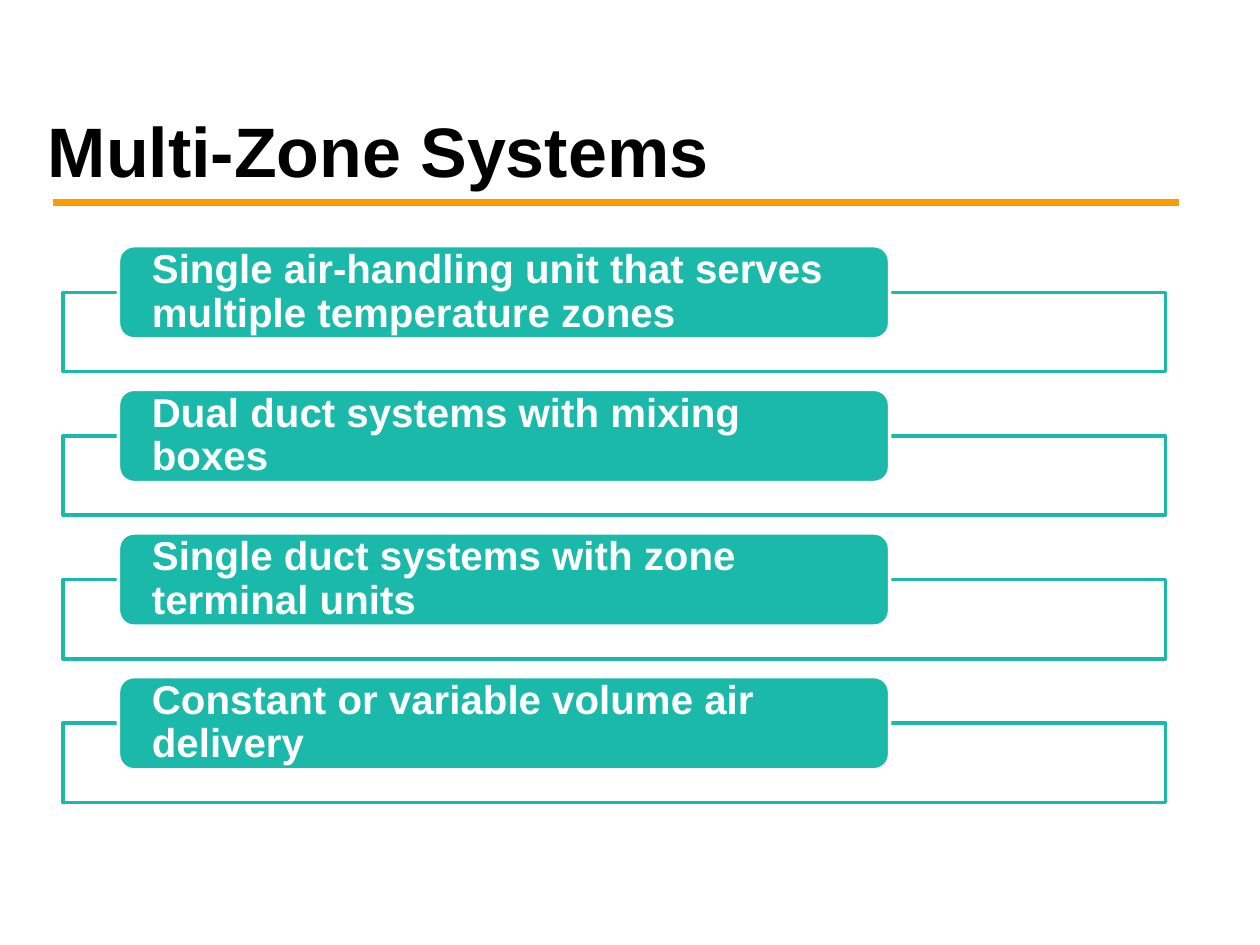
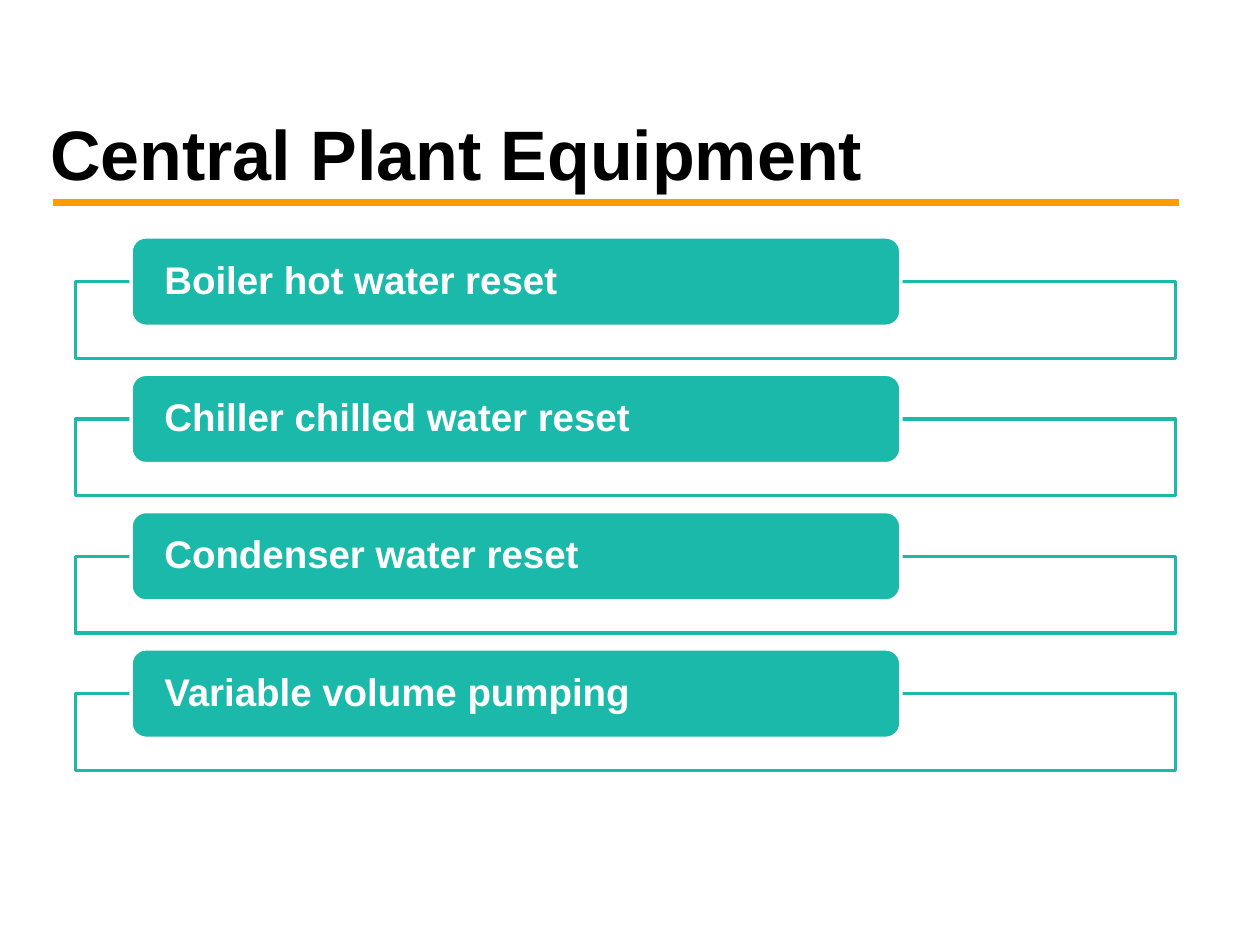
from lxml import etree
from pptx import Presentation
from pptx.dml.color import RGBColor
from pptx.enum.shapes import MSO_CONNECTOR, MSO_SHAPE
from pptx.enum.text import MSO_ANCHOR, MSO_AUTO_SIZE, PP_ALIGN
from pptx.oxml.ns import qn
from pptx.util import Inches, Pt

STRAIGHT = MSO_CONNECTOR.STRAIGHT
RECTANGLE, ROUNDED = MSO_SHAPE.RECTANGLE, MSO_SHAPE.ROUNDED_RECTANGLE
TOP, MIDDLE = MSO_ANCHOR.TOP, MSO_ANCHOR.MIDDLE
LEFT = PP_ALIGN.LEFT
NO_AUTOFIT = MSO_AUTO_SIZE.NONE

COLORS = {"title": "000000", "rule": "FE9B03", "teal": "1BB9A9", "white": "FFFFFF"}
FONT = "Arial"
LABEL_INDENT = 0.44  # from the left edge of a frame to its label

# Boxes are (left, top, width, height); sizes of frames and labels are (width, height).
SLIDES = [
    {
        "title": "Multi-Zone Systems",
        "title_box": (0.28, 0.88, 9, 0.71),
        "title_spacing": 0.9,
        "items": [
            "Single air-handling unit that serves multiple temperature zones",
            "Dual duct systems with mixing boxes",
            "Single duct systems with zone terminal units",
            "Constant or variable volume air delivery",
        ],
        "start": (0.5, 1.95),
        "step": 1.14,
        "frame": (8.75, 0.63),
        "label": (6.12, 0.74),
        "size": 23,
    },
    {
        "title": "Central Plant Equipment",
        "title_box": (0.3, 0.83, 9, 0.77),
        "title_spacing": 1.0,
        "items": [
            "Boiler hot water reset",
            "Chiller chilled water reset",
            "Condenser water reset",
            "Variable volume pumping",
        ],
        "start": (0.6, 1.88),
        "step": 1.09,
        "frame": (8.73, 0.61),
        "label": (6.11, 0.71),
        "size": 22,
    },
]


def color(name):
    return RGBColor.from_string(COLORS[name])


def write_text(shape, text, size, color_name, spacing, anchor, margins):
    """Fill a shape with one bold, left-aligned paragraph."""
    frame = shape.text_frame
    frame.text = text
    frame.word_wrap = True
    frame.auto_size = NO_AUTOFIT
    frame.vertical_anchor = anchor
    side, end = (Inches(margin) for margin in margins)
    frame.margin_left = frame.margin_right = side
    frame.margin_top = frame.margin_bottom = end
    paragraph = frame.paragraphs[0]
    paragraph.alignment = LEFT
    paragraph.line_spacing = spacing
    font = paragraph.runs[0].font
    font.name, font.size, font.bold = FONT, Pt(size), True
    font.color.rgb = color(color_name)


def add_heading(slide, content):
    """Place the title and the orange rule below it."""
    title = slide.shapes.title
    title.left, title.top, title.width, title.height = map(Inches, content["title_box"])
    write_text(title, content["title"], 40, "title", content["title_spacing"],
               TOP, (0.1, 0.05))
    rule = slide.shapes.add_connector(
        STRAIGHT, Inches(0.42), Inches(1.61), Inches(9.36), Inches(1.61))
    rule.line.color.rgb = color("rule")
    rule.line.width = Pt(4)
    etree.SubElement(rule._element.spPr, qn("a:effectLst"))


def add_box(slide, kind, box, fill, line):
    shape = slide.shapes.add_shape(kind, *map(Inches, box))
    shape.shadow.inherit = False
    shape.fill.solid()
    shape.fill.fore_color.rgb = color(fill)
    shape.line.color.rgb = color(line)
    shape.line.width = Pt(2)
    return shape


def add_list(slide, content):
    """Stack the items; each frame starts at half the height of its label."""
    left, start = content["start"]
    for index, item in enumerate(content["items"]):
        top = start + index * content["step"]
        frame_top = top + content["label"][1] / 2
        add_box(slide, RECTANGLE, (left, frame_top, *content["frame"]), "white", "teal")
        label = add_box(slide, ROUNDED, (left + LABEL_INDENT, top, *content["label"]),
                        "teal", "white")
        write_text(label, item, content["size"], "white", 0.9, MIDDLE, (0.23, 0))


def main():
    presentation = Presentation()
    presentation.slide_width, presentation.slide_height = Inches(10), Inches(7.5)
    title_only = presentation.slide_layouts.get_by_name("Title Only")
    for content in SLIDES:
        slide = presentation.slides.add_slide(title_only)
        add_heading(slide, content)
        add_list(slide, content)
    presentation.save("out.pptx")


if __name__ == "__main__":
    main()
